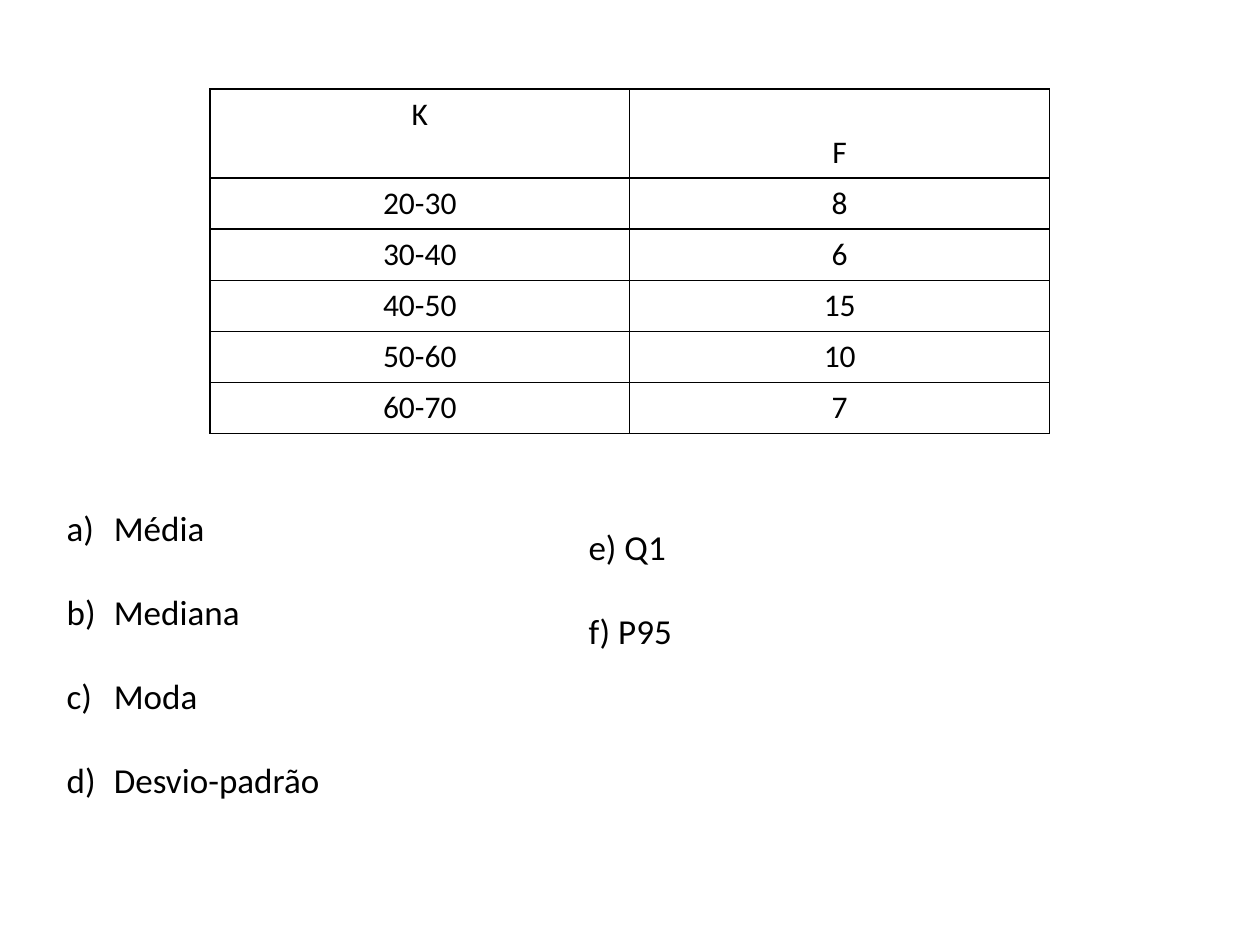
from lxml.etree import SubElement
from pptx import Presentation
from pptx.dml.color import RGBColor as Color
from pptx.enum.text import MSO_ANCHOR as Anchor, MSO_AUTO_SIZE as AutoSize, PP_ALIGN as Align
from pptx.oxml import parse_xml
from pptx.oxml.ns import nsdecls, qn
from pptx.util import Cm, Pt

# Content
FREQUENCIES = [
    ("K", "F"),
    ("20-30", "8"),
    ("30-40", "6"),
    ("40-50", "15"),
    ("50-60", "10"),
    ("60-70", "7"),
]
LISTS = [
    {"items": ["Média", "Mediana", "Moda", "Desvio-padrão"], "numbered": True,
     "box": (1.09, 10.08, 10.49, 6.25)},
    {"items": ["e) Q1", "f) P95"], "numbered": False,
     "box": (11.61, 10.46, 12.7, 2.82)},
]


class Theme:
    font = "Calibri"
    ink = Color(0, 0, 0)
    table_size = Pt(18)
    list_size = Pt(20)
    list_gap = Pt(24)
    border = Pt(1)
    indent = Cm(0.95)


# Geometry
TABLE_LEFT, TABLE_TOP, TABLE_WIDTH = Cm(4.23), Cm(1.79), Cm(16.93)
HEADER_HEIGHT, ROW_HEIGHT = Cm(1.8), Cm(1.03)


def add_span(para, text, size):
    span = para.add_run()
    span.text = text
    span.font.name = Theme.font
    span.font.size = size
    span.font.color.rgb = Theme.ink


def add_borders(cell):
    properties = cell._tc.get_or_add_tcPr()
    for position, side in enumerate(("lnL", "lnR", "lnT", "lnB")):
        properties.insert(position, parse_xml(
            f'<a:{side} {nsdecls("a")} w="{Theme.border}"><a:solidFill>'
            f'<a:srgbClr val="{Theme.ink}"/></a:solidFill></a:{side}>'))


def add_frequency_table(page):
    row_count, column_count = len(FREQUENCIES), len(FREQUENCIES[0])
    height = HEADER_HEIGHT + ROW_HEIGHT * (row_count - 1)
    table = page.shapes.add_table(row_count, column_count, TABLE_LEFT, TABLE_TOP,
                                  TABLE_WIDTH, height).table
    table.first_row = table.horz_banding = False
    for index, values in enumerate(FREQUENCIES):
        table.rows[index].height = ROW_HEIGHT if index else HEADER_HEIGHT
        for column, value in enumerate(values):
            cell = table.cell(index, column)
            cell.fill.background()
            add_borders(cell)
            para = cell.text_frame.paragraphs[0]
            para.alignment = Align.CENTER
            add_span(para, value, Theme.table_size)
    # The F heading sits at the foot of the tall header row
    table.cell(0, 1).vertical_anchor = Anchor.BOTTOM


def fill_list(box, items, numbered, place):
    box.left, box.top, box.width, box.height = (Cm(length) for length in place)
    frame = box.text_frame
    frame.word_wrap = True
    frame.auto_size = AutoSize.NONE
    for index, item in enumerate(items):
        para = frame.add_paragraph() if index else frame.paragraphs[0]
        para.space_before = Pt(0)
        para.space_after = Theme.list_gap
        indent = Theme.indent if numbered else 0
        properties = para._p.get_or_add_pPr()
        properties.set("marL", str(indent))
        properties.set("indent", str(-indent))
        if numbered:
            SubElement(properties, qn("a:buFont"), typeface="+mj-lt")
            SubElement(properties, qn("a:buAutoNum"), type="alphaLcParenR")
        else:
            SubElement(properties, qn("a:buNone"))
        add_span(para, item, Theme.list_size)


def main():
    deck = Presentation()
    deck.slide_width, deck.slide_height = Cm(25.4), Cm(19.05)
    page = deck.slides.add_slide(deck.slide_layouts.get_by_name("Two Content"))

    # The page has no title
    title = page.shapes.title._element
    title.getparent().remove(title)

    # Questions, then the table they refer to
    for box, entry in zip(list(page.placeholders), LISTS):
        fill_list(box, entry["items"], entry["numbered"], entry["box"])
    add_frequency_table(page)

    deck.save("out.pptx")


if __name__ == "__main__":
    main()
